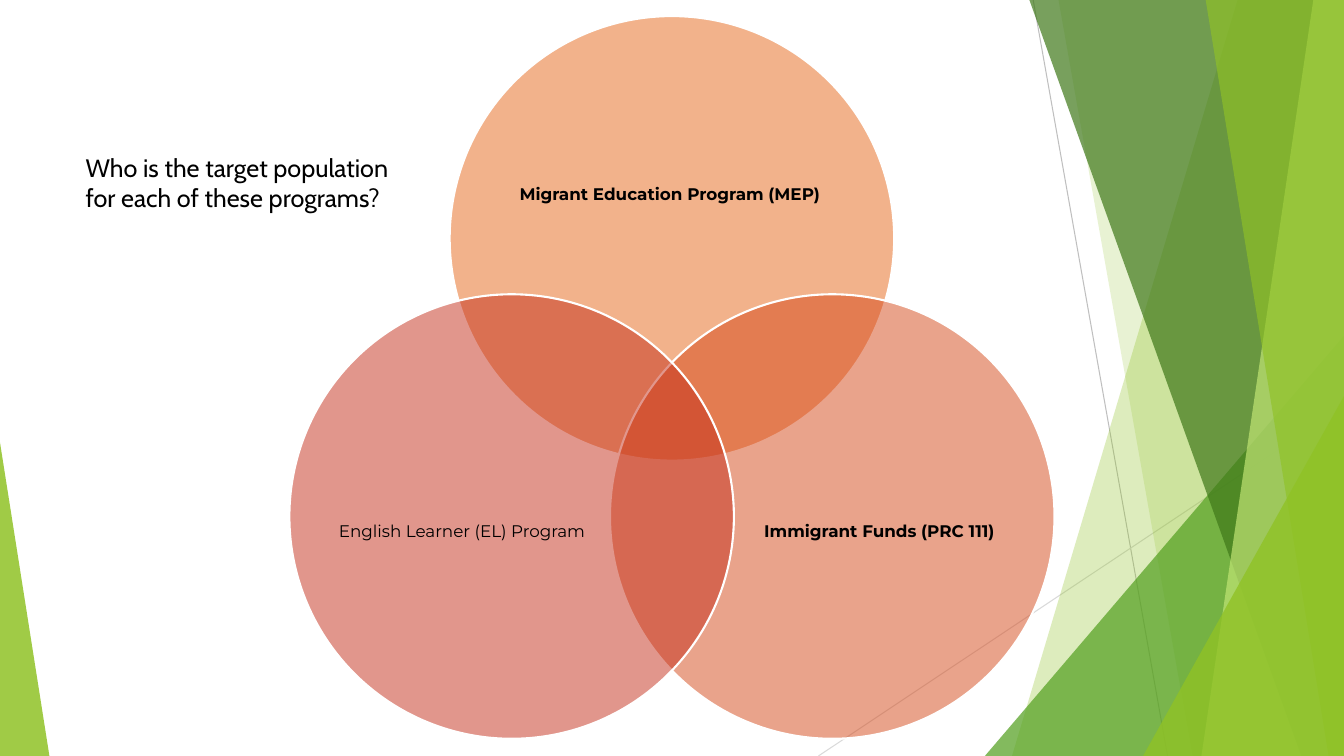
from lxml.etree import SubElement
from pptx import Presentation
from pptx.dml.color import RGBColor
from pptx.enum.shapes import MSO_CONNECTOR, MSO_SHAPE
from pptx.enum.text import MSO_ANCHOR, PP_ALIGN
from pptx.oxml.ns import qn
from pptx.util import Pt

WIDE, HIGH = 960, 540
LIME = "90C226"
SIZE = 317.5


def color(code):
    return RGBColor.from_string(code)


def paint(shape, code, alpha, edge=None):
    shape.shadow.inherit = False
    shape.fill.solid()
    shape.fill.fore_color.rgb = color(code)
    fill = shape.element.spPr.find(qn("a:solidFill"))
    SubElement(fill[0], qn("a:alpha"), val=str(alpha * 1000))
    if edge:
        shape.line.color.rgb = color(edge)
        shape.line.width = Pt(1.5)
    else:
        shape.line.fill.background()


def add_line(slide, start, end, code):
    line = slide.shapes.add_connector(
        MSO_CONNECTOR.STRAIGHT, *map(Pt, start + end))
    line.line.color.rgb = color(code)
    line.line.width = Pt(0.75)
    SubElement(line.element.spPr, qn("a:effectLst"))


def add_band(slide, top, base, code, alpha):
    pen = slide.shapes.build_freeform(Pt(top), Pt(-0.6))
    ends = [(WIDE, -0.6), (WIDE, HIGH), (base, HIGH)]
    pen.add_line_segments([(Pt(x), Pt(y)) for x, y in ends], close=True)
    paint(pen.convert_to_shape(), code, alpha)


def add_wedge(slide, left, width, height, tip, code, alpha):
    box = map(Pt, (left, HIGH - height, width, height))
    wedge = slide.shapes.add_shape(MSO_SHAPE.ISOSCELES_TRIANGLE, *box)
    wedge.adjustments[0] = tip
    paint(wedge, code, alpha)


def add_disc(slide, left, top, code):
    disc = slide.shapes.add_shape(
        MSO_SHAPE.OVAL, Pt(left), Pt(top), Pt(SIZE), Pt(SIZE))
    paint(disc, code, 50, edge="FFFFFF")


def add_text(slide, text, box, font="Montserrat", size=12, bold=False,
             align=PP_ALIGN.CENTER, anchor=MSO_ANCHOR.MIDDLE,
             inset=(0, 0), space=0.9, after=4.2):
    frame = slide.shapes.add_textbox(*map(Pt, box)).text_frame
    frame.word_wrap = True
    frame.vertical_anchor = anchor
    frame.margin_left = frame.margin_right = Pt(inset[0])
    frame.margin_top = frame.margin_bottom = Pt(inset[1])
    para = frame.paragraphs[0]
    para.alignment = align
    para.line_spacing = space
    para.space_after = Pt(after)
    run = para.add_run()
    run.text = text
    run.font.name = font
    run.font.size = Pt(size)
    run.font.bold = bold
    run.font.color.rgb = color("000000")


def add_decor(slide):
    add_line(slide, (738, 0), (834, HIGH), "BFBFBF")
    add_line(slide, (WIDE, 290), (584.6, HIGH), "D9D9D9")
    add_band(slide, 884.2, 722.9, LIME, 30)
    add_band(slide, 756, 851.8, LIME, 20)
    add_wedge(slide, 703.5, 256.5, 300.2, 1, "54A021", 72)
    add_band(slide, 735.1, 929.5, "3F7819", 70)
    add_band(slide, 938.2, 858.2, "C0E474", 70)
    add_band(slide, 861.1, 949, LIME, 65)
    add_wedge(slide, 816.5, 143.5, 257, 1, LIME, 80)
    add_wedge(slide, 0, 35.3, 223.9, 0, LIME, 85)


def add_venn(slide):
    low, side = (292.3, 190.8, 175), 210.2
    add_disc(slide, 321.2, 11.5, "E76618")
    add_text(slide, "Migrant Education Program (MEP) ",
             (363.6, 67.7, 233.3, 143.3), bold=True)
    add_disc(slide, 435.7, side, "D54819")
    add_text(slide, "Immigrant Funds (PRC 111)", (532.8, *low), bold=True)
    add_disc(slide, 206.7, side, "C42F1A")
    add_text(slide, "English Learner (EL) Program ", (236.2, *low))


def main():
    deck = Presentation()
    deck.slide_width, deck.slide_height = Pt(WIDE), Pt(HIGH)
    slide = deck.slides.add_slide(deck.slide_layouts[6])
    add_decor(slide)
    add_venn(slide)
    add_text(slide, "Who is the target population for each of these programs?",
             (54, 105.1, 231.8, 72.7), font="Cabin", size=18,
             align=PP_ALIGN.LEFT, anchor=MSO_ANCHOR.TOP,
             inset=(7.2, 3.6), space=1.0, after=0)
    deck.save("out.pptx")


if __name__ == "__main__":
    main()
